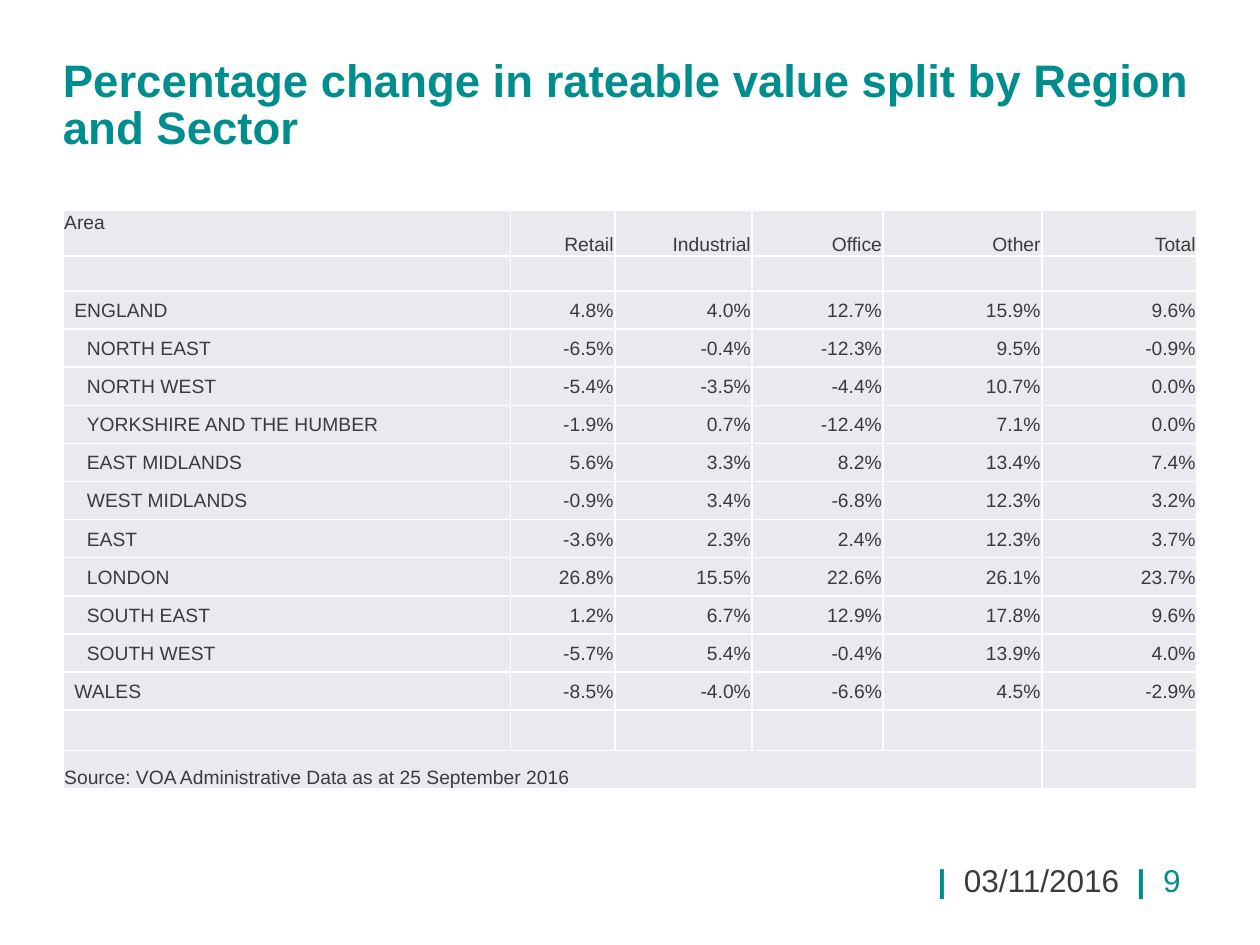
from dataclasses import dataclass

from lxml.etree import SubElement
from pptx import Presentation
from pptx.dml.color import RGBColor
from pptx.enum.text import MSO_ANCHOR, PP_ALIGN
from pptx.oxml import parse_xml
from pptx.oxml.ns import nsdecls, qn
from pptx.slide import Slide
from pptx.table import Table, _Cell
from pptx.text.text import TextFrame, _Paragraph
from pptx.util import Inches, Pt

TEAL, INK, PANEL, WHITE = "008D8E", "3B3A3D", "EAE9ED", "FFFFFF"
COUNTRY_INDENT, REGION_INDENT, EDGE = 0.09, 0.19, 0.01
CELL_SIZE = 11
LEFT, TOP, WIDTH, TABLE_HEIGHT = 0.5, 1.67, 9, 4.59
COLUMN_WIDTHS = (3.55, 0.83, 1.09, 1.04, 1.26, 1.23)
SECTORS = ("Retail", "Industrial", "Office", "Other", "Total")
HEADER_HEIGHT, UPPER_GAP, LOWER_GAP = 0.36, 0.28, 0.32


@dataclass(frozen=True)
class Area:
    """An area with its percentage change in each sector."""

    name: str
    changes: tuple[float, ...]
    indent: float = REGION_INDENT


AREAS = (
    Area("ENGLAND", (4.8, 4.0, 12.7, 15.9, 9.6), COUNTRY_INDENT),
    Area("NORTH EAST", (-6.5, -0.4, -12.3, 9.5, -0.9)),
    Area("NORTH WEST", (-5.4, -3.5, -4.4, 10.7, 0.0)),
    Area("YORKSHIRE AND THE HUMBER", (-1.9, 0.7, -12.4, 7.1, 0.0)),
    Area("EAST MIDLANDS", (5.6, 3.3, 8.2, 13.4, 7.4)),
    Area("WEST MIDLANDS", (-0.9, 3.4, -6.8, 12.3, 3.2)),
    Area("EAST", (-3.6, 2.3, 2.4, 12.3, 3.7)),
    Area("LONDON", (26.8, 15.5, 22.6, 26.1, 23.7)),
    Area("SOUTH EAST", (1.2, 6.7, 12.9, 17.8, 9.6)),
    Area("SOUTH WEST", (-5.7, 5.4, -0.4, 13.9, 4.0)),
    Area("WALES", (-8.5, -4.0, -6.6, 4.5, -2.9), COUNTRY_INDENT),
)


def colour(value: str) -> RGBColor:
    """Turn a hex string into a colour."""
    return RGBColor.from_string(value)


def add_run(paragraph: _Paragraph, text: str, size: float, ink: str, bold: bool = False) -> None:
    """Add one formatted run to a paragraph."""
    run = paragraph.add_run()
    run.text = text
    run.font.name = "Arial"
    run.font.size = Pt(size)
    run.font.bold = bold
    run.font.color.rgb = colour(ink)


def add_text_area(slide: Slide, left: float, top: float, width: float, height: float) -> TextFrame:
    """Add a wrapping text box without insets."""
    frame = slide.shapes.add_textbox(
        Inches(left), Inches(top), Inches(width), Inches(height)
    ).text_frame
    frame.word_wrap = True
    frame.margin_left = frame.margin_right = frame.margin_top = frame.margin_bottom = 0
    return frame


def style_cell(cell: _Cell) -> None:
    """Give a cell its fill, white borders, insets and empty-text size."""
    cell.fill.solid()
    cell.fill.fore_color.rgb = colour(PANEL)
    cell.margin_left = cell.margin_right = cell.margin_top = Inches(EDGE)
    cell.margin_bottom = 0
    properties = cell._tc.get_or_add_tcPr()
    for position, side in enumerate(("lnL", "lnR", "lnT", "lnB")):
        properties.insert(position, parse_xml(
            f'<a:{side} {nsdecls("a")} w="{Pt(1)}"><a:solidFill>'
            f'<a:srgbClr val="{WHITE}"/></a:solidFill></a:{side}>'
        ))
    ending = SubElement(cell.text_frame.paragraphs[0]._p, qn("a:endParaRPr"))
    ending.set("sz", str(CELL_SIZE * 100))


def write_cell(cell: _Cell, text: str, anchor: MSO_ANCHOR,
               align: PP_ALIGN = PP_ALIGN.RIGHT, indent: float = EDGE) -> None:
    """Write a text into a cell."""
    cell.vertical_anchor = anchor
    cell.margin_left = Inches(indent)
    paragraph = cell.text_frame.paragraphs[0]
    paragraph.alignment = align
    add_run(paragraph, text, CELL_SIZE, INK)


def add_change_table(slide: Slide) -> Table:
    """Add the empty styled grid for the areas and sectors."""
    row_count = len(AREAS) + 4
    table = slide.shapes.add_table(
        row_count, len(COLUMN_WIDTHS),
        Inches(LEFT), Inches(TOP), Inches(WIDTH), Inches(TABLE_HEIGHT),
    ).table
    table.first_row = table.horz_banding = False
    for column, width in zip(table.columns, COLUMN_WIDTHS):
        column.width = Inches(width)
    special = {0: HEADER_HEIGHT, 1: UPPER_GAP, row_count - 2: LOWER_GAP}
    regular = (TABLE_HEIGHT - sum(special.values())) / (row_count - len(special))
    for index, row in enumerate(table.rows):
        row.height = Inches(special.get(index, regular))
    for cell in table.iter_cells():
        style_cell(cell)
    return table


def fill_change_table(table: Table) -> None:
    """Write the header, the area rows and the source line."""
    write_cell(table.cell(0, 0), "Area", MSO_ANCHOR.TOP, PP_ALIGN.LEFT)
    for column, sector in enumerate(SECTORS, 1):
        write_cell(table.cell(0, column), sector, MSO_ANCHOR.BOTTOM)
    for row, area in enumerate(AREAS, 2):
        write_cell(table.cell(row, 0), area.name, MSO_ANCHOR.MIDDLE, PP_ALIGN.LEFT, area.indent)
        for column, change in enumerate(area.changes, 1):
            write_cell(table.cell(row, column), f"{change:.1f}%", MSO_ANCHOR.MIDDLE)
    last = len(table.rows) - 1
    source = table.cell(last, 0)
    source.merge(table.cell(last, len(SECTORS) - 1))
    write_cell(source, "Source: VOA Administrative Data as at 25 September 2016",
               MSO_ANCHOR.BOTTOM, PP_ALIGN.LEFT)


def add_title(slide: Slide) -> None:
    """Add the slide title."""
    frame = add_text_area(slide, LEFT, 0.29, WIDTH, 1.11)
    frame.vertical_anchor = MSO_ANCHOR.MIDDLE
    title = frame.paragraphs[0]
    title.line_spacing = Pt(27)
    add_run(title, "Percentage change in rateable value split by Region and Sector", 26, TEAL, True)


def add_footer(slide: Slide) -> None:
    """Add the date and page number with their dividers."""
    footer = add_text_area(slide, 4.81, 6.83, 4.56, 0.15).paragraphs[0]
    footer.alignment = PP_ALIGN.RIGHT
    for text, ink, bold in (
        ("|  ", TEAL, True), ("03/11/2016  ", INK, False),
        ("|  ", TEAL, True), ("9", TEAL, False),
    ):
        add_run(footer, text, 18, ink, bold)


def main() -> None:
    """Build and save the slide."""
    presentation = Presentation()
    presentation.slide_width = Inches(10)
    presentation.slide_height = Inches(7.5)
    slide = presentation.slides.add_slide(presentation.slide_layouts[6])
    add_title(slide)
    fill_change_table(add_change_table(slide))
    add_footer(slide)
    presentation.save("out.pptx")


if __name__ == "__main__":
    main()
